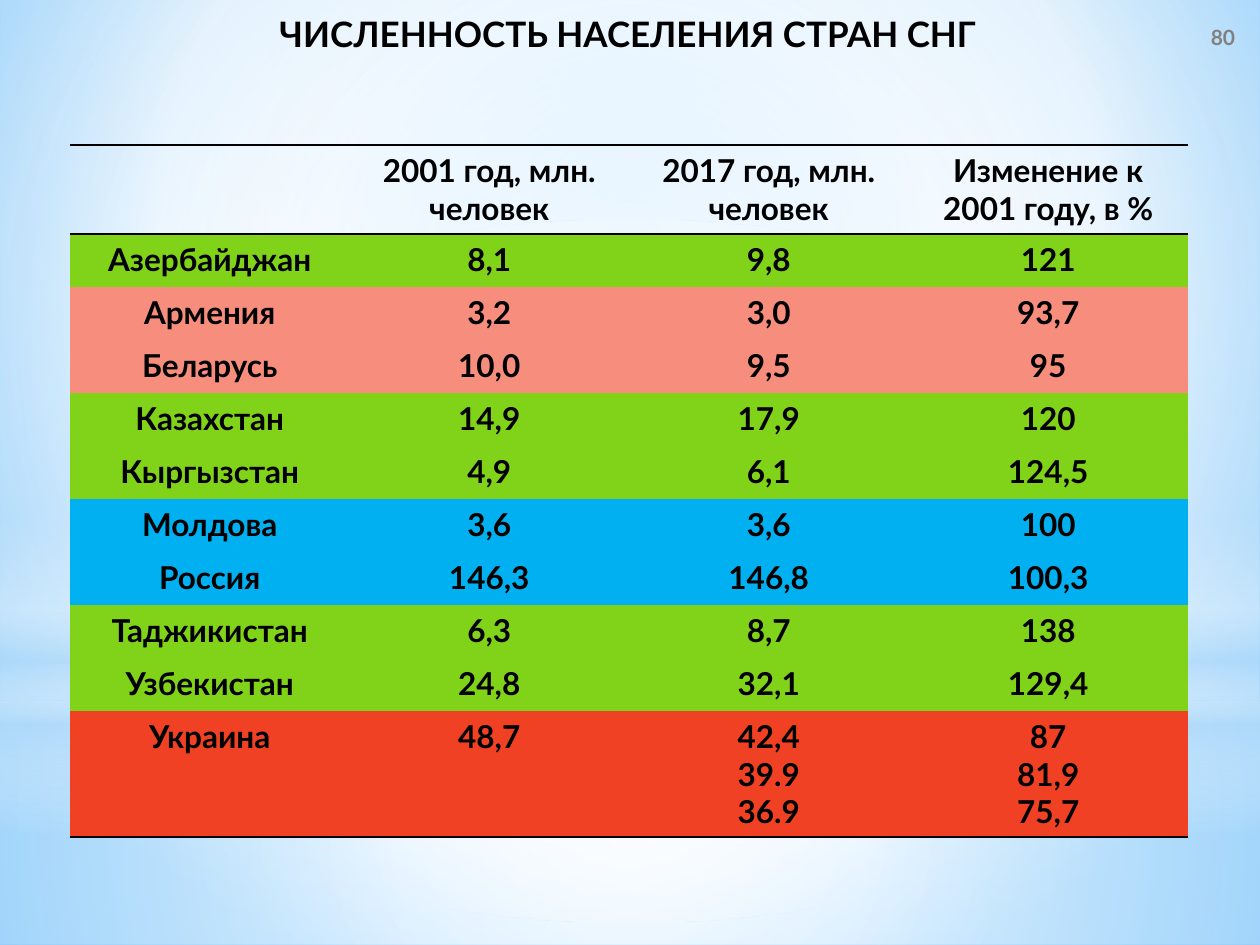
import pptx
import pptx.dml.color
import pptx.enum.shapes
import pptx.enum.text
import pptx.oxml
import pptx.oxml.ns
import pptx.util

RGBColor = pptx.dml.color.RGBColor
PP_ALIGN = pptx.enum.text.PP_ALIGN
MSO_ANCHOR = pptx.enum.text.MSO_ANCHOR
MSO_SHAPE = pptx.enum.shapes.MSO_SHAPE
qn = pptx.oxml.ns.qn

PX = 914400 // 126
FONT = "Lato"
BLACK = RGBColor(0x00, 0x00, 0x00)
GRAY = RGBColor(0x80, 0x80, 0x80)
WHITE = RGBColor(0xFF, 0xFF, 0xFF)
PALE_BLUE = RGBColor(0xB4, 0xDC, 0xFA)
SKY = RGBColor(0x9E, 0xD5, 0xFF)
DEEP_SKY = RGBColor(0x5B, 0xB9, 0xFF)
GREEN = RGBColor(0x81, 0xD3, 0x1A)
PINK = RGBColor(0xF7, 0x8D, 0x7C)
BLUE = RGBColor(0x00, 0xB0, 0xF0)
RED = RGBColor(0xF1, 0x41, 0x24)

NO_STYLE = "{2D5ABB26-0587-4C30-8999-92F81FD0307C}"
CENTER = (50, 50, 50, 50)
HEADER = ("", "2001 год, млн. человек", "2017 год, млн. человек",
          "Изменение к 2001 году, в %")
COUNTRIES = [
    (GREEN, "Азербайджан", "8,1", "9,8", "121"),
    (PINK, "Армения", "3,2", "3,0", "93,7"),
    (PINK, "Беларусь", "10,0", "9,5", "95"),
    (GREEN, "Казахстан", "14,9", "17,9", "120"),
    (GREEN, "Кыргызстан", "4,9", "6,1", "124,5"),
    (BLUE, "Молдова", "3,6", "3,6", "100"),
    (BLUE, "Россия", "146,3", "146,8", "100,3"),
    (GREEN, "Таджикистан", "6,3", "8,7", "138"),
    (GREEN, "Узбекистан", "24,8", "32,1", "129,4"),
    (RED, "Украина", "48,7", "42,4\n39.9\n36.9", "87\n81,9\n75,7"),
]
HEADER_HEIGHT, ROW_HEIGHT, LAST_HEIGHT = 89, 53, 126


def px(*lengths):
    return [pptx.util.Emu(length * PX) for length in lengths]


def set_gradient(fill, element, stops, focus=None):
    """Stops are (position %, colour, opacity %); without focus it runs down."""
    fill.gradient()
    gradient = next(element.iter(qn("a:gradFill")))
    stop_xml = "".join(
        f'<a:gs pos="{position * 1000}"><a:srgbClr val="{color}">'
        f'<a:alpha val="{opacity * 1000}"/></a:srgbClr></a:gs>'
        for position, color, opacity in stops)
    if focus:
        edges = " ".join(f'{side}="{value * 1000}"' for side, value in zip("ltrb", focus))
        direction = f'<a:path path="circle"><a:fillToRect {edges}/></a:path>'
    else:
        direction = '<a:lin ang="5400000" scaled="0"/>'
    gradient.getparent().replace(gradient, pptx.oxml.parse_xml(
        f'<a:gradFill {pptx.oxml.ns.nsdecls("a")} rotWithShape="1">'
        f'<a:gsLst>{stop_xml}</a:gsLst>{direction}</a:gradFill>'))


def add_glow(slide, kind, box, stops, focus=None):
    shape = slide.shapes.add_shape(kind, *px(*box))
    shape.shadow.inherit = False
    shape.line.fill.background()
    set_gradient(shape.fill, shape._element, stops, focus)


def write_text(text_frame, text, size, color=BLACK):
    for index, line in enumerate(text.split("\n")):
        paragraph = text_frame.add_paragraph() if index else text_frame.paragraphs[0]
        paragraph.alignment = PP_ALIGN.CENTER
        run = paragraph.add_run()
        run.text = line
        run.font.name = FONT
        run.font.size = pptx.util.Pt(size)
        run.font.bold = True
        run.font.color.rgb = color


def add_background(slide):
    set_gradient(slide.background.fill, slide._element,
                 [(0, SKY, 100), (60, WHITE, 100), (100, DEEP_SKY, 100)], (20, 10, 20, 60))
    add_glow(slide, MSO_SHAPE.RECTANGLE, (0, 703, 1260, 242),
             [(0, WHITE, 91), (37, WHITE, 76), (100, PALE_BLUE, 79)], CENTER)
    add_glow(slide, MSO_SHAPE.RECTANGLE, (0, 0, 1260, 703),
             [(0, WHITE, 89), (48, WHITE, 62), (100, PALE_BLUE, 79)], CENTER)
    add_glow(slide, MSO_SHAPE.RECTANGLE, (0, 519, 1260, 315),
             [(0, WHITE, 0), (29, WHITE, 30), (45, PALE_BLUE, 40),
              (55, WHITE, 26), (65, PALE_BLUE, 60), (100, WHITE, 0)])
    add_glow(slide, MSO_SHAPE.OVAL, (0, 220, 1260, 703),
             [(0, WHITE, 100), (56, WHITE, 0)], CENTER)


def format_title(slide, text):
    title = slide.shapes.title
    slide.shapes._spTree.append(title._element)  # above the background glows
    title.left, title.top, title.width, title.height = px(2, 6, 1252, 55)
    title.text_frame.vertical_anchor = MSO_ANCHOR.TOP
    title.text_frame.word_wrap = True
    write_text(title.text_frame, text, 20)


def add_page_number(slide, text):
    box = slide.shapes.add_textbox(*px(1186, 0, 74, 74))
    box.text_frame.word_wrap = True
    box.text_frame.vertical_anchor = MSO_ANCHOR.MIDDLE
    write_text(box.text_frame, text, 12, GRAY)


def set_borders(cell, sides):
    properties = cell._tc.get_or_add_tcPr()
    for index, side in enumerate(sides):
        properties.insert(index, pptx.oxml.parse_xml(
            f'<a:ln{side} {pptx.oxml.ns.nsdecls("a")} w="12700"><a:solidFill>'
            f'<a:srgbClr val="{BLACK}"/></a:solidFill></a:ln{side}>'))


def add_population_table(slide):
    rows = [(None, *HEADER)] + COUNTRIES
    heights = [HEADER_HEIGHT] + [ROW_HEIGHT] * (len(rows) - 2) + [LAST_HEIGHT]
    frame = slide.shapes.add_table(len(rows), len(HEADER), *px(70, 145, 1118, sum(heights)))
    table = frame.table
    table.horz_banding = False
    next(frame._element.iter(qn("a:tableStyleId"))).text = NO_STYLE
    borders = {0: "TB", len(rows) - 1: "B"}
    for row_index, (color, *texts) in enumerate(rows):
        table.rows[row_index].height = px(heights[row_index])[0]
        for column_index, text in enumerate(texts):
            cell = table.cell(row_index, column_index)
            if color:
                cell.fill.solid()
                cell.fill.fore_color.rgb = color
            else:
                cell.fill.background()
            set_borders(cell, borders.get(row_index, ""))
            if text:
                write_text(cell.text_frame, text, 18)


def main():
    presentation = pptx.Presentation()
    presentation.slide_width, presentation.slide_height = px(1260, 945)
    slide = presentation.slides.add_slide(presentation.slide_layouts[5])
    add_background(slide)
    format_title(slide, "ЧИСЛЕННОСТЬ НАСЕЛЕНИЯ СТРАН СНГ")
    add_page_number(slide, "80")
    add_population_table(slide)
    presentation.save("out.pptx")


if __name__ == "__main__":
    main()
